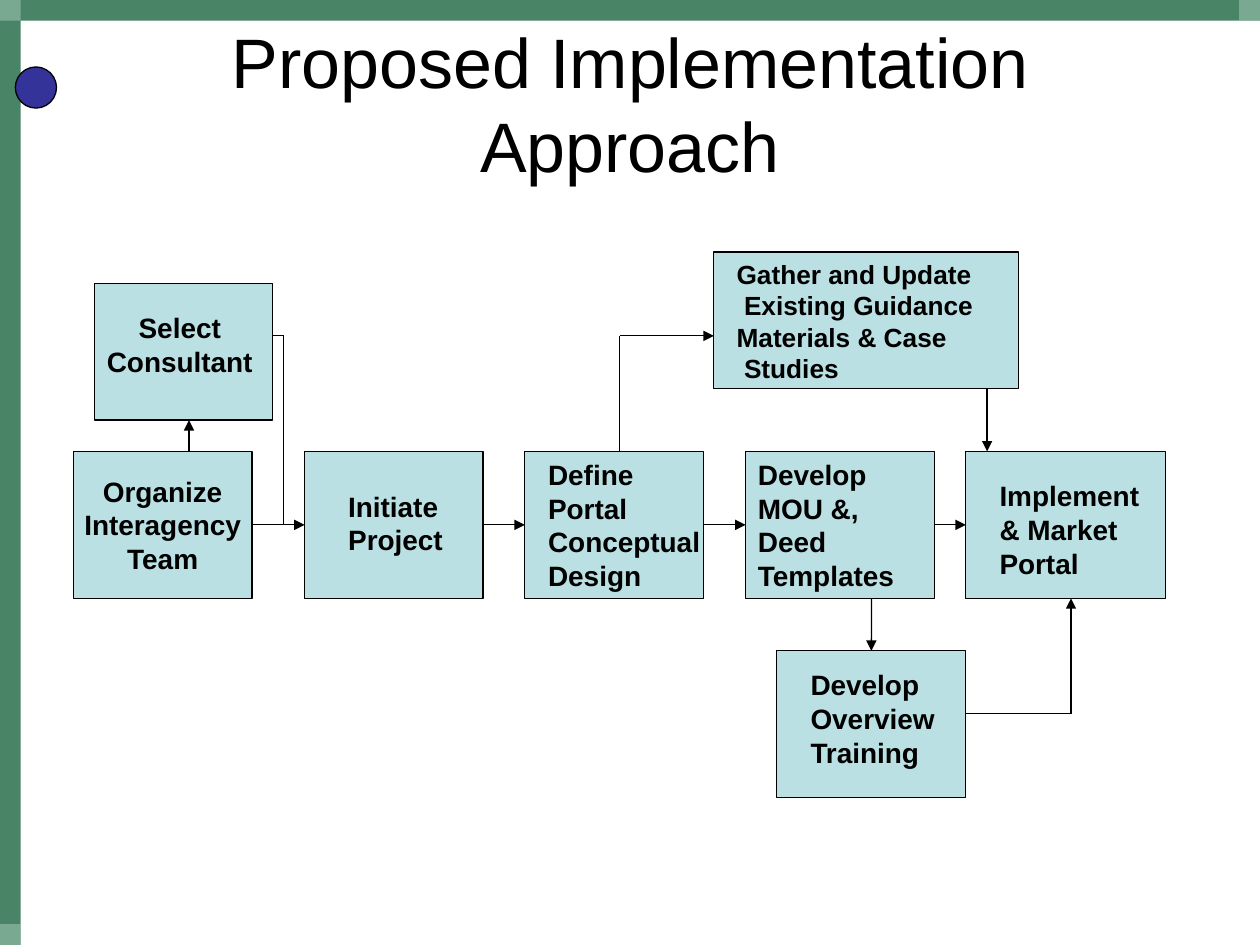
from dataclasses import dataclass
from itertools import pairwise
from typing import NamedTuple, Optional

from lxml import etree
from pptx import Presentation
from pptx.dml.color import RGBColor
from pptx.enum.shapes import MSO_CONNECTOR, MSO_SHAPE
from pptx.enum.text import MSO_ANCHOR, MSO_AUTO_SIZE, PP_ALIGN
from pptx.oxml.ns import qn
from pptx.util import Cm, Pt

RECT, OVAL = MSO_SHAPE.RECTANGLE, MSO_SHAPE.OVAL
STRAIGHT = MSO_CONNECTOR.STRAIGHT
LEFT, CENTER = PP_ALIGN.LEFT, PP_ALIGN.CENTER
TOP, MIDDLE = MSO_ANCHOR.TOP, MSO_ANCHOR.MIDDLE
NO_FIT, GROW = MSO_AUTO_SIZE.NONE, MSO_AUTO_SIZE.SHAPE_TO_FIT_TEXT
SIDE_TOP, SIDE_LEFT, SIDE_RIGHT = 0, 1, 3
TITLE_ONLY = 5


@dataclass(frozen=True)
class Theme:
    font: str = "Arial"
    ink: RGBColor = RGBColor(0x00, 0x00, 0x00)
    box: RGBColor = RGBColor(0xBB, 0xE0, 0xE3)
    band: RGBColor = RGBColor(0x48, 0x84, 0x65)
    corner: RGBColor = RGBColor(0xAB, 0xD1, 0xBD)
    emblem: RGBColor = RGBColor(0x33, 0x33, 0x99)
    title_size: float = 40
    step_size: float = 16
    guidance_size: float = 15
    line_width: float = 0.75


THEME = Theme()


class Area(NamedTuple):
    """Left, top, width and height in centimetres."""
    left: float
    top: float
    width: float
    height: float

    def lengths(self) -> list:
        return [Cm(value) for value in self]


@dataclass(frozen=True)
class Step:
    box: Area
    lines: tuple
    label: Optional[Area] = None
    align: PP_ALIGN = LEFT
    wrap: bool = False
    size: float = THEME.step_size
    indented: tuple = ()


@dataclass(frozen=True)
class Route:
    points: tuple
    arrow: bool = True


PAGE_WIDTH, PAGE_HEIGHT, BAND = 25.4, 19.05, 0.42
ROW_TOP, ROW_HEIGHT, ROW_MIDDLE = 9.1, 2.96, 10.58
ROW_BOTTOM = ROW_TOP + ROW_HEIGHT


def row_box(left: float, width: float = 3.6) -> Area:
    return Area(left, ROW_TOP, width, ROW_HEIGHT)


STEPS = {
    "organize": Step(row_box(1.48), ("Organize", "Interagency", "Team"), align=CENTER),
    "select": Step(Area(1.9, 5.72, 3.6, 2.75), ("Select", "Consultant"),
                   Area(1.9, 6.14, 3.45, 1.63), align=CENTER),
    "initiate": Step(row_box(6.14), ("Initiate", "Project"), Area(6.77, 9.74, 2.41, 1.63)),
    "define": Step(row_box(10.58), ("Define", "Portal", "Conceptual", "Design"),
                   Area(10.8, ROW_TOP, 3.58, 2.97)),
    "develop": Step(row_box(15.03, 3.81), ("Develop", "MOU &, Deed Templates"),
                    Area(15.03, ROW_TOP, 4.02, 2.97), wrap=True),
    "implement": Step(row_box(19.47, 4.02), ("Implement", "& Market", "Portal"),
                      Area(19.9, 9.53, 3.33, 2.29)),
    "gather": Step(Area(14.39, 5.08, 6.14, 2.75),
                   ("Gather and Update", "Existing Guidance", "Materials & Case", "Studies"),
                   Area(14.6, 5.08, 7.62, 2.79), wrap=True,
                   size=THEME.guidance_size, indented=(1, 3)),
    "training": Step(Area(15.66, 13.12, 3.81, ROW_HEIGHT), ("Develop", "Overview", "Training"),
                     Area(16.09, 13.34, 3.02, 3.05)),
}
MAIN_ROW = ("organize", "initiate", "define", "develop", "implement")
ROUTES = (
    Route(((19.47, 14.39), (21.59, 14.39), (21.59, ROW_BOTTOM))),
    Route(((19.9, 7.83), (19.9, ROW_TOP))),
    Route(((12.49, ROW_TOP), (12.49, 6.77), (14.39, 6.77))),
    Route(((3.81, ROW_TOP), (3.81, 8.47))),
    Route(((5.5, 6.77), (5.72, 6.77), (5.72, ROW_MIDDLE)), arrow=False),
)


def add_block(slide, area: Area, fill: RGBColor, *, kind=RECT, outlined=False, alpha=None):
    block = slide.shapes.add_shape(kind, *area.lengths())
    block.shadow.inherit = False
    block.fill.solid()
    block.fill.fore_color.rgb = fill
    if alpha is not None:
        color = block.fill._xPr.find(".//" + qn("a:srgbClr"))
        etree.SubElement(color, qn("a:alpha"), val=str(alpha * 1000))
    if outlined:
        block.line.color.rgb = THEME.ink
        block.line.width = Pt(THEME.line_width)
    else:
        block.line.fill.background()
    return block


def write_text(frame, lines: tuple, *, size: float, bold=True, align=LEFT, anchor=TOP,
               wrap=False, fit=GROW, indented=()) -> None:
    frame.word_wrap = wrap
    frame.auto_size = fit
    frame.vertical_anchor = anchor
    frame.text = "\n".join(lines)
    for index, paragraph in enumerate(frame.paragraphs):
        paragraph.alignment = align
        if index in indented:
            paragraph._p.get_or_add_pPr().set("marL", str(Cm(0.15)))
        for run in paragraph.runs:
            run.font.name = THEME.font
            run.font.size = Pt(size)
            run.font.bold = bold
            run.font.color.rgb = THEME.ink


def add_step(slide, step: Step):
    """Draw the box and its label, which sits inside the box when it has no area."""
    box = add_block(slide, step.box, THEME.box, outlined=True)
    if step.label:
        label = slide.shapes.add_textbox(*step.label.lengths())
        write_text(label.text_frame, step.lines, size=step.size, align=step.align,
                   wrap=step.wrap, indented=step.indented)
    else:
        write_text(box.text_frame, step.lines, size=step.size, align=step.align,
                   anchor=MIDDLE, fit=NO_FIT)
    return box


def add_link(slide, start: tuple, end: tuple, *, arrow=True):
    link = slide.shapes.add_connector(STRAIGHT, *(Cm(value) for value in (*start, *end)))
    link.line.color.rgb = THEME.ink
    link.line.width = Pt(THEME.line_width)
    if arrow:
        etree.SubElement(link.line._get_or_add_ln(), qn("a:tailEnd"), type="triangle")
    etree.SubElement(link._element.spPr, qn("a:effectLst"))
    return link


def add_frame(slide) -> None:
    """Draw the green bands, their pale corners and the round emblem."""
    add_block(slide, Area(0, 0, PAGE_WIDTH, BAND), THEME.band)
    add_block(slide, Area(0, 0, BAND, PAGE_HEIGHT), THEME.band)
    for left, top in ((0, 0), (PAGE_WIDTH - BAND, 0), (0, PAGE_HEIGHT - BAND)):
        add_block(slide, Area(left, top, BAND, BAND), THEME.corner, alpha=50)
    add_block(slide, Area(0.31, 1.35, 0.83, 0.83), THEME.emblem, kind=OVAL, outlined=True)


def add_title(slide) -> None:
    title = slide.shapes.title
    title.left, title.top, title.width, title.height = Area(1.27, 0.76, 22.86, 2.62).lengths()
    write_text(title.text_frame, ("Proposed Implementation Approach",), size=THEME.title_size,
               bold=False, align=CENTER, anchor=MIDDLE, wrap=True, fit=NO_FIT)


def main() -> None:
    deck = Presentation()
    deck.slide_width, deck.slide_height = Cm(PAGE_WIDTH), Cm(PAGE_HEIGHT)
    slide = deck.slides.add_slide(deck.slide_layouts[TITLE_ONLY])
    add_frame(slide)
    add_title(slide)
    boxes = {key: add_step(slide, step) for key, step in STEPS.items()}

    for source, target in pairwise(MAIN_ROW):
        start, end = STEPS[source].box, STEPS[target].box
        link = add_link(slide, (start.left + start.width, ROW_MIDDLE), (end.left, ROW_MIDDLE))
        link.begin_connect(boxes[source], SIDE_RIGHT)
        link.end_connect(boxes[target], SIDE_LEFT)

    training_link = add_link(slide, (17.57, ROW_BOTTOM), (17.57, 13.12))
    training_link.end_connect(boxes["training"], SIDE_TOP)

    for route in ROUTES:
        for start, end in pairwise(route.points):
            add_link(slide, start, end, arrow=route.arrow and end == route.points[-1])
    deck.save("out.pptx")


if __name__ == "__main__":
    main()
